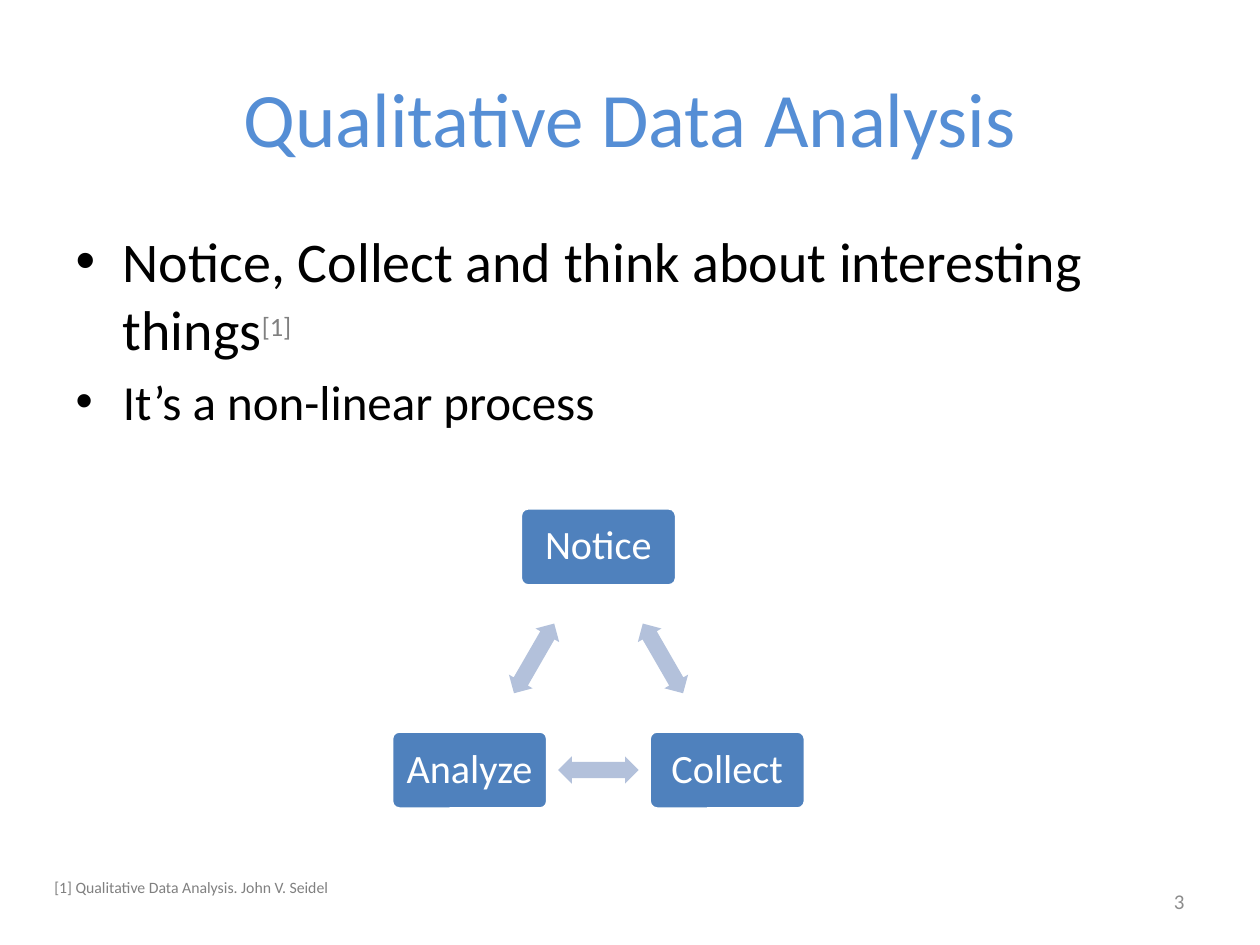
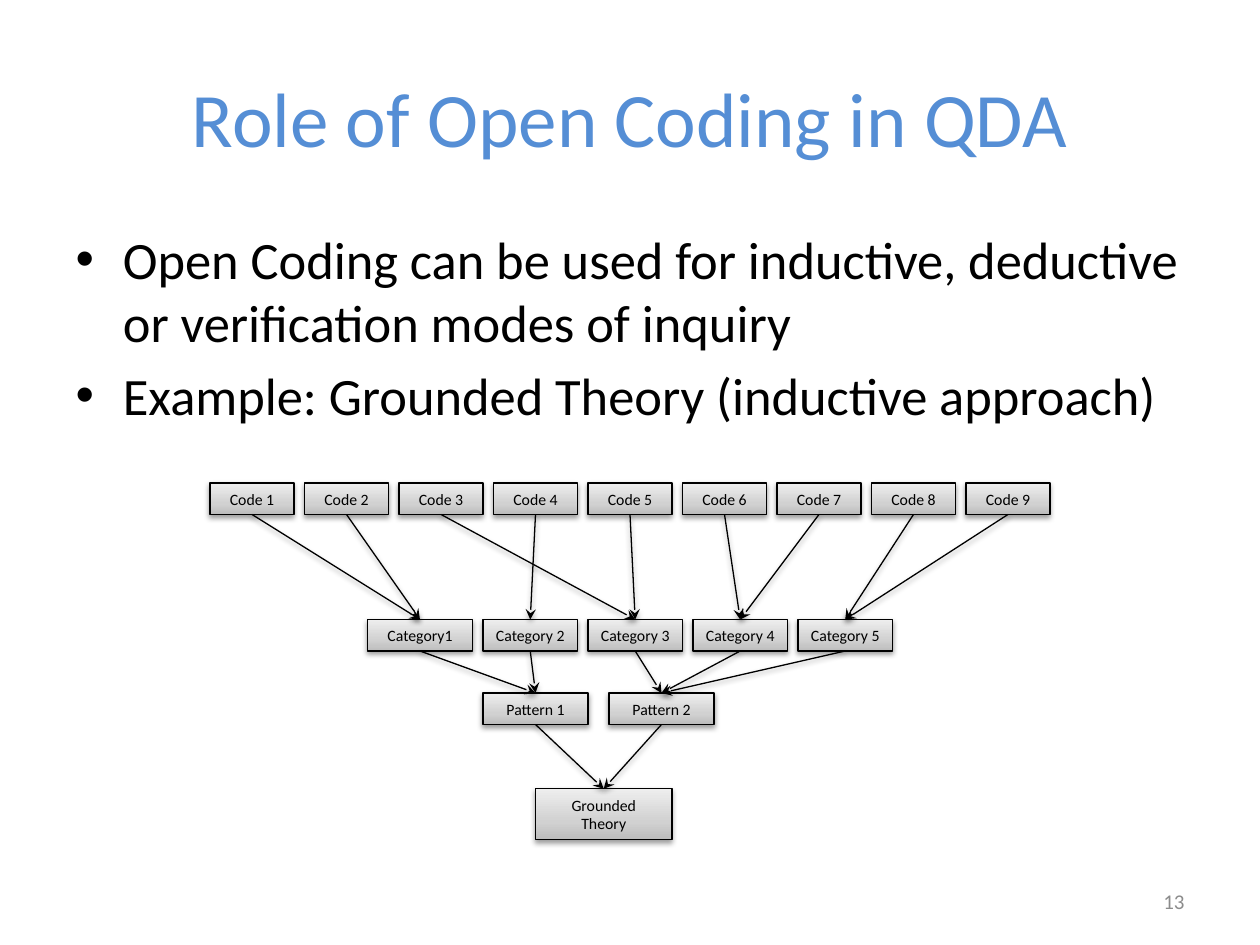
from copy import deepcopy
from math import cos, radians, sin

from lxml import etree
from pptx import Presentation
from pptx.dml.color import RGBColor
from pptx.enum.shapes import MSO_CONNECTOR, MSO_SHAPE
from pptx.enum.text import MSO_ANCHOR, MSO_AUTO_SIZE, PP_ALIGN
from pptx.oxml import parse_xml
from pptx.oxml.ns import nsdecls, qn
from pptx.util import Pt

LEFT, CENTER, RIGHT = PP_ALIGN.LEFT, PP_ALIGN.CENTER, PP_ALIGN.RIGHT
MIDDLE = MSO_ANCHOR.MIDDLE
NO_AUTOFIT = MSO_AUTO_SIZE.NONE
RECTANGLE = MSO_SHAPE.RECTANGLE
ROUNDED = MSO_SHAPE.ROUNDED_RECTANGLE
DOUBLE_ARROW = MSO_SHAPE.LEFT_RIGHT_ARROW
STRAIGHT = MSO_CONNECTOR.STRAIGHT
BOTTOM_SIDE, TOP_SIDE = 2, 0


class Theme:
    font = "Calibri"
    title_color = RGBColor(0x55, 0x8E, 0xD5)
    ink = RGBColor(0, 0, 0)
    paper = RGBColor(0xFF, 0xFF, 0xFF)
    note_color = RGBColor(0x80, 0x80, 0x80)
    number_color = RGBColor(0x8C, 0x8C, 0x8C)
    step_fill = RGBColor(0x4F, 0x81, 0xBD)
    arrow_fill = RGBColor(0xB3, 0xC1, 0xDB)
    title_size, step_size, number_size, small_size = 44, 23, 12, 9
    node_gradient = ((0, "BDBDBD"), (35, "D1D1D1"), (100, "EEEEEE"))


def set_font(font, size, color):
    font.name, font.size, font.color.rgb = Theme.font, Pt(size), color


def write(shape, text, size, color, align):
    """Put one formatted paragraph in the shape and return it."""
    shape.text_frame.word_wrap = True
    paragraph = shape.text_frame.paragraphs[0]
    paragraph.text = text
    paragraph.alignment = align
    set_font(paragraph.font, size, color)
    return paragraph


stops = "".join(
    f'<a:gs pos="{position * 1000}"><a:srgbClr val="{color}"/></a:gs>'
    for position, color in Theme.node_gradient
)
node_fill = parse_xml(
    f'<a:gradFill {nsdecls("a")} rotWithShape="1"><a:gsLst>{stops}</a:gsLst>'
    '<a:lin ang="16200000" scaled="0"/></a:gradFill>'
)
soft_shadow = parse_xml(
    f'<a:effectLst {nsdecls("a")}><a:outerShdw blurRad="{Pt(3.1)}" dist="{Pt(1.6)}"'
    ' dir="5400000" rotWithShape="0"><a:srgbClr val="000000">'
    '<a:alpha val="38000"/></a:srgbClr></a:outerShdw></a:effectLst>'
)

prs = Presentation()
prs.slide_width, prs.slide_height = Pt(720), Pt(540)

# Title, list and page number; a list item is a row of (text, size, color, baseline)
outline = [
    ("Qualitative Data Analysis", "3", 138, [
        [("Notice, Collect and think about interesting things", 32, Theme.ink, None),
         ("[1]", 26, Theme.note_color, "30000")],
        [("It’s a non-linear process", 28, Theme.ink, None)],
    ]),
    ("Role of Open Coding in QDA", "13", 356.4, [
        [("Open Coding can be used for inductive, deductive or verification modes of inquiry",
          30, Theme.ink, None)],
        [("Example: Grounded Theory (inductive approach)", 30, Theme.ink, None)],
    ]),
]
for heading, page, list_height, items in outline:
    slide = prs.slides.add_slide(prs.slide_layouts[1])
    title, body = slide.placeholders
    title.left, title.top, title.width, title.height = Pt(36), Pt(21.6), Pt(648), Pt(90)
    write(title, heading, Theme.title_size, Theme.title_color, CENTER)
    title.text_frame.vertical_anchor = MIDDLE

    body.left, body.top, body.width, body.height = Pt(36), Pt(126), Pt(648), Pt(list_height)
    body.text_frame.auto_size = NO_AUTOFIT
    for index, item in enumerate(items):
        bullet = body.text_frame.add_paragraph() if index else body.text_frame.paragraphs[0]
        for text, size, color, baseline in item:
            run = bullet.add_run()
            run.text = text
            set_font(run.font, size, color)
            if baseline:
                run.font._element.set("baseline", baseline)

    page_number = slide.shapes.add_textbox(Pt(516), Pt(500.5), Pt(168), Pt(28.75))
    write(page_number, page, Theme.number_size, Theme.number_color, RIGHT)
    page_number.text_frame.vertical_anchor = MIDDLE

process_slide, coding_slide = prs.slides

# Cycle: steps on a circle, each followed by the arrow to the next step
citation = process_slide.shapes.add_textbox(Pt(24), Pt(498), Pt(366), Pt(18))
write(citation, "[1] Qualitative Data Analysis. John V. Seidel",
      Theme.small_size, Theme.note_color, LEFT)

center_x, center_y, radius = 342, 397.5, 85
step_width, step_height = 89.3, 44.6
arrow_width, arrow_height = 46, 15.6
for index, name in enumerate(["Notice", "Collect", "Analyze"]):
    angle = radians(120 * index - 90)
    x, y = center_x + radius * cos(angle), center_y + radius * sin(angle)
    step = process_slide.shapes.add_shape(
        ROUNDED, Pt(x - step_width / 2), Pt(y - step_height / 2),
        Pt(step_width), Pt(step_height))
    step.adjustments[0] = 0.1
    step.shadow.inherit = False
    step.fill.solid()
    step.fill.fore_color.rgb = Theme.step_fill
    step.line.color.rgb = Theme.paper
    step.line.width = Pt(2)
    write(step, name, Theme.step_size, Theme.paper, CENTER).line_spacing = 0.9
    step.text_frame.vertical_anchor = MIDDLE

    angle += radians(60)
    x, y = center_x + radius / 2 * cos(angle), center_y + radius / 2 * sin(angle)
    arrow = process_slide.shapes.add_shape(
        DOUBLE_ARROW, Pt(x - arrow_width / 2), Pt(y - arrow_height / 2),
        Pt(arrow_width), Pt(arrow_height))
    arrow.adjustments[0], arrow.adjustments[1] = 0.6, 0.5
    arrow.rotation = 60 + 120 * index
    arrow.shadow.inherit = False
    arrow.fill.solid()
    arrow.fill.fore_color.rgb = Theme.arrow_fill
    arrow.line.fill.background()

# Levels of coding: left, top, height, gap and the (label, width) of each node
levels = [
    (120, 276, 18, 6, [(f"Code {n}", 48) for n in range(1, 10)]),
    (210, 354, 18, 6, [("Category1", 60)] + [(f"Category {n}", 54) for n in range(2, 6)]),
    (276, 396, 18, 12, [("Pattern 1", 60), ("Pattern 2", 60)]),
    (306, 450.75, 29, 0, [("Grounded Theory", 78)]),
]
node_rows = []
for left, top, height, gap, labels in levels:
    row = []
    for label, width in labels:
        node = coding_slide.shapes.add_shape(RECTANGLE, Pt(left), Pt(top), Pt(width), Pt(height))
        node.fill.background()
        properties = node.element.spPr
        properties.replace(properties.find(qn("a:noFill")), deepcopy(node_fill))
        node.line.color.rgb = Theme.ink
        node.line.width = Pt(0.75)
        properties.append(deepcopy(soft_shadow))
        write(node, label, Theme.small_size, Theme.ink, CENTER)
        node.text_frame.vertical_anchor = MIDDLE
        row.append(node)
        left += width + gap
    node_rows.append(row)

# For each node of a level, the index of the node it leads to one level down
targets = [[0, 0, 2, 1, 2, 3, 3, 4, 4], [0, 0, 1, 1, 1], [0, 0]]
for sources, next_row, indexes in zip(node_rows, node_rows[1:], targets):
    for source, index in zip(sources, indexes):
        link = coding_slide.shapes.add_connector(STRAIGHT, 0, 0, 0, 0)
        link.begin_connect(source, BOTTOM_SIDE)
        link.end_connect(next_row[index], TOP_SIDE)
        link.line.color.rgb = Theme.ink
        link.line.width = Pt(0.75)
        properties = link.element.spPr
        etree.SubElement(properties.find(qn("a:ln")), qn("a:tailEnd"), type="stealth")
        properties.append(deepcopy(soft_shadow))

prs.save("out.pptx")
